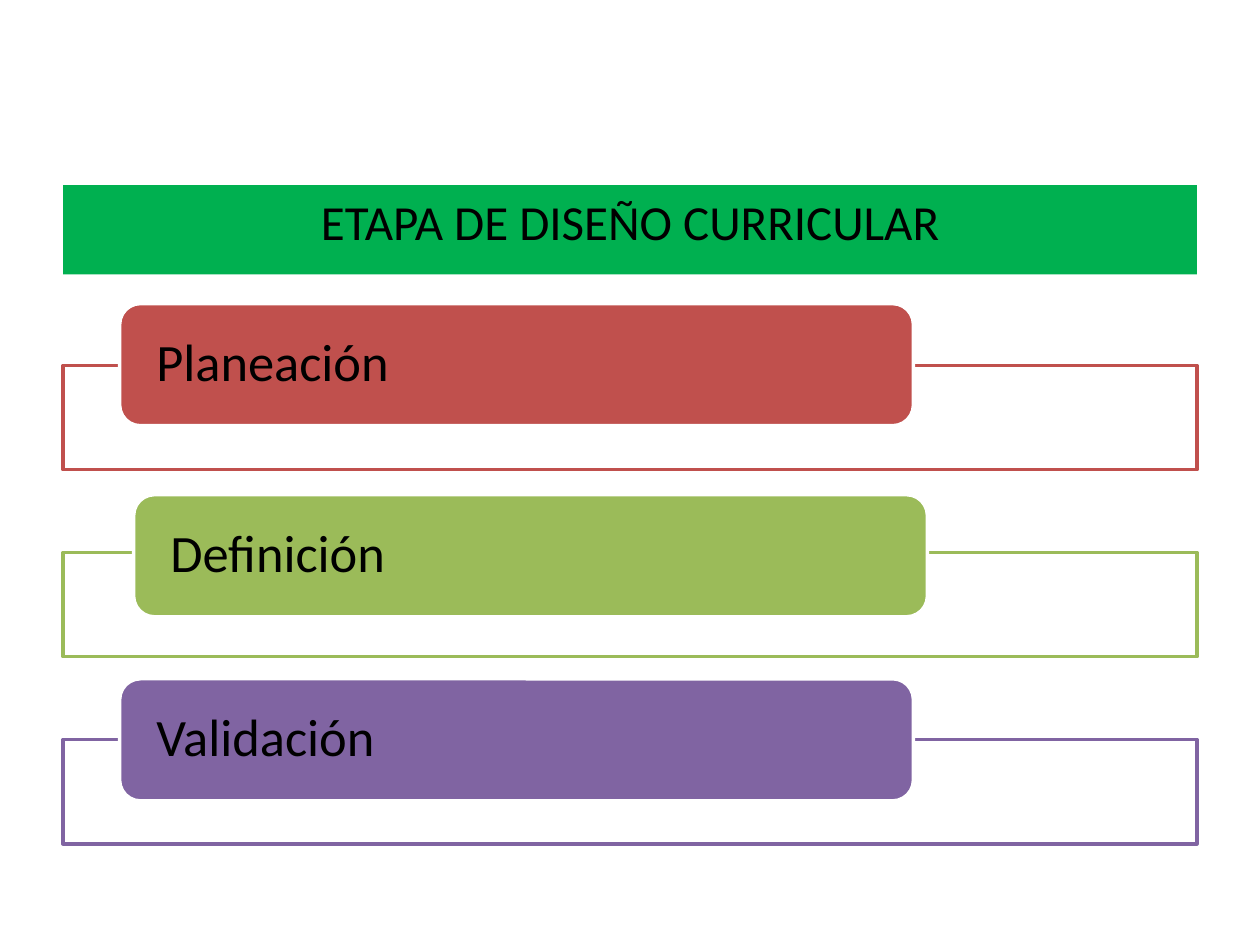
from lxml import etree
from pptx import Presentation
from pptx.dml.color import RGBColor
from pptx.enum.shapes import MSO_SHAPE
from pptx.enum.text import MSO_ANCHOR, MSO_AUTO_SIZE, PP_ALIGN
from pptx.oxml.ns import qn
from pptx.util import Pt

RECTANGLE, ROUNDED = MSO_SHAPE.RECTANGLE, MSO_SHAPE.ROUNDED_RECTANGLE
TOP, MIDDLE = MSO_ANCHOR.TOP, MSO_ANCHOR.MIDDLE
LEFT, CENTER = PP_ALIGN.LEFT, PP_ALIGN.CENTER
NO_FIT = MSO_AUTO_SIZE.NONE
TITLE_ONLY = 5
FONT, BLACK, WHITE, GREEN = "Calibri", "000000", "FFFFFF", "00B050"
MARGIN, CONTENT_WIDTH = 36, 648
FIRST_FRAME_TOP, FRAME_PITCH, FRAME_HEIGHT = 208.8, 106.9, 59.6
CARD_WIDTH, CARD_HEIGHT = 453.6, 69.8
STAGES = [
    ("Planeación", "C0504D", 68.4, 173.5),
    ("Definición", "9BBB59", 76.4, 282.7),
    ("Validación", "8064A2", 68.4, 387.9),
]


def set_values(target, values):
    """Set each attribute of the target from a dict."""
    for name, value in values.items():
        setattr(target, name, value)


def paint(shape, fill):
    """Give the shape a solid fill."""
    shape.fill.solid()
    shape.fill.fore_color.rgb = RGBColor.from_string(fill)


def write(shape, text, size, frame_format, paragraph_format):
    """Write one formatted paragraph into the shape."""
    set_values(shape.text_frame, {"word_wrap": True, "auto_size": NO_FIT, **frame_format})
    paragraph = shape.text_frame.paragraphs[0]
    set_values(paragraph, paragraph_format)
    run = paragraph.add_run()
    run.text = text
    set_values(run.font, {"name": FONT, "size": Pt(size)})
    run.font.color.rgb = RGBColor.from_string(BLACK)


def add_box(slide, kind, box, fill, line):
    """Add an outlined preset shape in the given box."""
    shape = slide.shapes.add_shape(kind, *map(Pt, box))
    shape.shadow.inherit = False
    paint(shape, fill)
    shape.line.color.rgb = RGBColor.from_string(line)
    shape.line.width = Pt(2)
    return shape


def add_title(slide, box, text):
    """Place the title placeholder as a green band."""
    title = slide.shapes.title
    set_values(title, dict(zip(("left", "top", "width", "height"), map(Pt, box))))
    paint(title, GREEN)
    write(title, text, 28, {"vertical_anchor": TOP}, {"alignment": CENTER})


def add_stage(slide, box, card_left, card_top, name, color):
    """Add a frame in the box with a named card over its upper edge."""
    frame = add_box(slide, RECTANGLE, box, WHITE, color)
    frame_fill = frame.fill.fore_color._xFill.find(qn("a:srgbClr"))
    etree.SubElement(frame_fill, qn("a:alpha"), val="90000")
    card_box = (card_left, card_top, CARD_WIDTH, CARD_HEIGHT)
    card = add_box(slide, ROUNDED, card_box, color, WHITE)
    card.adjustments[0] = 0.17
    insets = {"margin_left": Pt(17.5), "margin_right": Pt(17.5),
              "margin_top": 0, "margin_bottom": 0}
    write(card, name, 30, {"vertical_anchor": MIDDLE, **insets},
          {"alignment": LEFT, "line_spacing": 0.9})


def main():
    """Build the slide and save it."""
    presentation = Presentation()
    set_values(presentation, {"slide_width": Pt(720), "slide_height": Pt(540)})
    slide = presentation.slides.add_slide(presentation.slide_layouts[TITLE_ONLY])
    add_title(slide, (MARGIN, 105.8, CONTENT_WIDTH, 51), "ETAPA DE DISEÑO CURRICULAR")
    for index, (name, color, card_left, card_top) in enumerate(STAGES):
        frame_top = FIRST_FRAME_TOP + index * FRAME_PITCH
        box = (MARGIN, frame_top, CONTENT_WIDTH, FRAME_HEIGHT)
        add_stage(slide, box, card_left, card_top, name, color)
    presentation.save("out.pptx")


if __name__ == "__main__":
    main()
